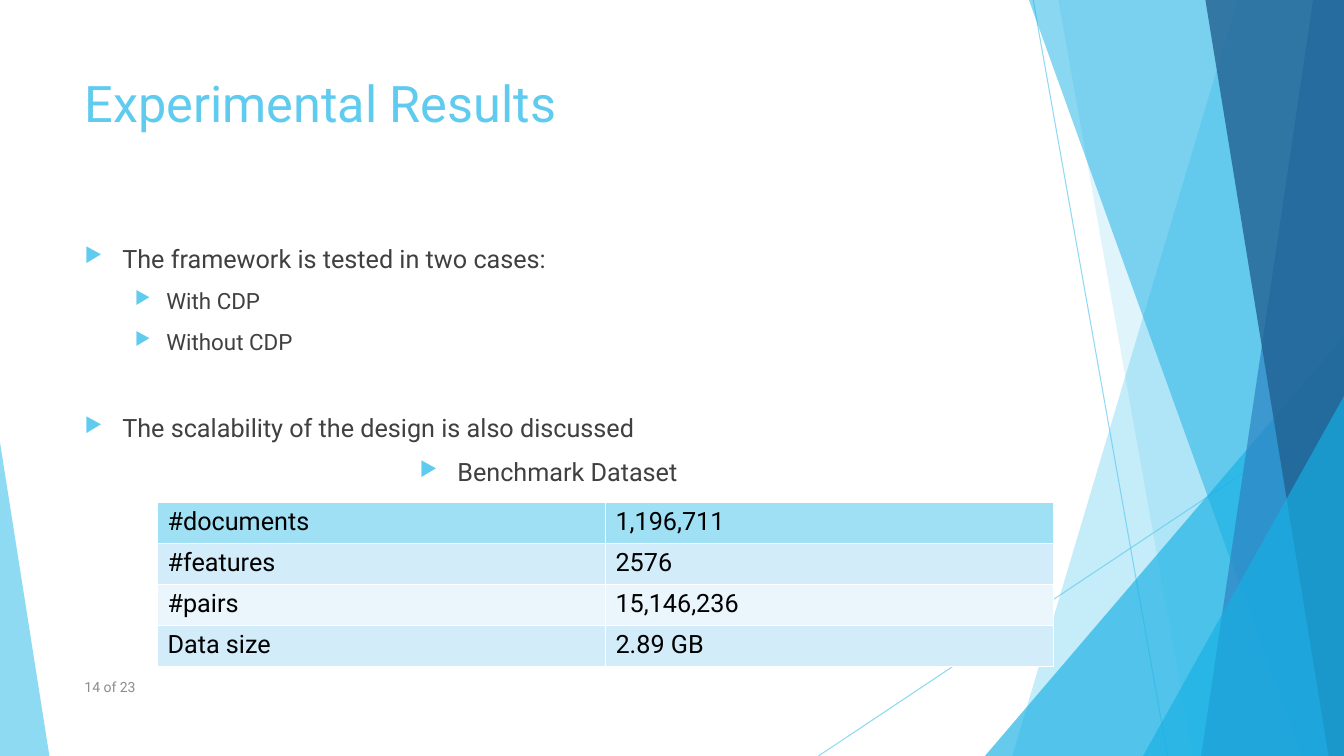
"""Build the Experimental Results slide with its faceted background and dataset table."""
from lxml import etree
from pptx import Presentation
from pptx.dml.color import RGBColor
from pptx.enum import shapes, text
from pptx.oxml import ns
from pptx.util import Pt

FONT = "Roboto"
SKY, CYAN, WHITE = "5FCBEF", "17B0E4", "FFFFFF"
WIDTH, HEIGHT = 960, 540


def paint(fill, colour):
    fill.solid()
    fill.fore_color.rgb = RGBColor.from_string(colour)


def add_xml(parent, tag, **attributes):
    return etree.SubElement(parent, ns.qn(tag), attributes)


deck = Presentation()
deck.slide_width, deck.slide_height = Pt(WIDTH), Pt(HEIGHT)
slide = deck.slides.add_slide(deck.slide_layouts[5])

for start_x, start_y, end_x in [(738, 0, 834), (WIDTH, 290, 584.6)]:
    ray = slide.shapes.add_connector(
        shapes.MSO_CONNECTOR.STRAIGHT, Pt(start_x), Pt(start_y), Pt(end_x), Pt(HEIGHT))
    ray.line.width = Pt(0.75)
    paint(ray.line.fill, SKY)
    add_xml(ray.element.xpath(".//a:srgbClr")[0], "a:alpha", val="70000")
    add_xml(ray.element.spPr, "a:effectLst")

# Bands give top and bottom x; triangles give left, top, width and apex.
facets = [
    ("band", (884, 723), SKY, 36),
    ("band", (756, 852), SKY, 20),
    ("triangle", (703.5, 240, 256.5, 1), CYAN, 66),
    ("band", (735, 929.5), CYAN, 50),
    ("band", (938, 858), "2E83C3", 70),
    ("band", (861, 949), "226292", 80),
    ("triangle", (816.5, 283, 143.5, 1), CYAN, 66),
    ("triangle", (0, 316, 35.3, 0), SKY, 70),
]
for kind, place, colour, opacity in facets:
    if kind == "band":
        top_x, bottom_x = place
        outline = slide.shapes.build_freeform(Pt(top_x), 0)
        outline.add_line_segments(
            [(Pt(x), Pt(y)) for x, y in [(WIDTH, 0), (WIDTH, HEIGHT), (bottom_x, HEIGHT)]])
        facet = outline.convert_to_shape()
    else:
        left, top, width, apex = place
        facet = slide.shapes.add_shape(
            shapes.MSO_SHAPE.ISOSCELES_TRIANGLE, Pt(left), Pt(top), Pt(width), Pt(HEIGHT - top))
        facet.adjustments[0] = apex
    facet.shadow.inherit = False
    facet.line.fill.background()
    paint(facet.fill, colour)
    add_xml(facet.element.xpath(".//a:srgbClr")[0], "a:alpha", val=str(opacity * 1000))

title = slide.shapes.title
title.left, title.top, title.width, title.height = Pt(53.3), Pt(48), Pt(677), Pt(104)
title.text_frame.text = "Experimental Results"
page = slide.shapes.add_textbox(Pt(53.3), Pt(476), Pt(496), Pt(28.8))
page.text_frame.text = "14 of 23"
for box, anchor, size, colour in [
    (title, text.MSO_ANCHOR.TOP, 36, SKY),
    (page, text.MSO_ANCHOR.MIDDLE, 10, "8C8C8C"),
]:
    frame = box.text_frame
    frame.word_wrap = True
    frame.vertical_anchor = anchor
    frame.paragraphs[0].alignment = text.PP_ALIGN.LEFT
    font = frame.paragraphs[0].runs[0].font
    font.name, font.size = FONT, Pt(size)
    paint(font.fill, colour)

points = [
    ("The framework is tested in two cases:", 0, 10, "LEFT"),
    ("With CDP", 1, 10, "LEFT"),
    ("Without CDP", 1, 10, "LEFT"),
    ("The scalability of the design is also discussed", 0, 41, "LEFT"),
    ("Benchmark Dataset", 0, 10, "CENTER"),
]
body = slide.shapes.add_textbox(Pt(53.3), Pt(170), Pt(677), Pt(305)).text_frame
body.word_wrap = True
body.text = "\n".join(point[0] for point in points)
for paragraph, (_, level, gap, alignment) in zip(body.paragraphs, points):
    paragraph.level = level
    paragraph.space_before = Pt(gap)
    paragraph.alignment = text.PP_ALIGN[alignment]
    font = paragraph.runs[0].font
    font.name, font.size = FONT, Pt(16 if level else 18)
    paint(font.fill, "404040")
    margin, hang = (58.5, 22.5) if level else (27, 27)
    properties = paragraph._p.get_or_add_pPr()
    properties.set("marL", str(Pt(margin)))
    properties.set("indent", str(-Pt(hang)))
    add_xml(add_xml(properties, "a:buClr"), "a:srgbClr", val=SKY)
    add_xml(properties, "a:buSzPct", val="80000")
    add_xml(properties, "a:buChar", char="▶")

dataset = [
    ("#documents", "1,196,711", "9FE0F5"),
    ("#features", "2576", "D2ECF9"),
    ("#pairs", "15,146,236", "EAF6FC"),
    ("Data size", "2.89 GB", "D2ECF9"),
]
table = slide.shapes.add_table(
    len(dataset), 2, Pt(112.5), Pt(359), Pt(640), Pt(116.8)).table
table.first_row = table.horz_banding = False
for row, (*values, shade) in enumerate(dataset):
    for column, value in enumerate(values):
        cell = table.cell(row, column)
        cell.text = value
        font = cell.text_frame.paragraphs[0].runs[0].font
        font.name, font.size = FONT, Pt(18)
        paint(font.fill, "000000")
        cell_properties = cell._tc.get_or_add_tcPr()
        for side in "LRTB":
            border = add_xml(cell_properties, f"a:ln{side}", w=str(Pt(1)))
            add_xml(add_xml(border, "a:solidFill"), "a:srgbClr", val=WHITE)
        paint(cell.fill, shade)

deck.save("out.pptx")
